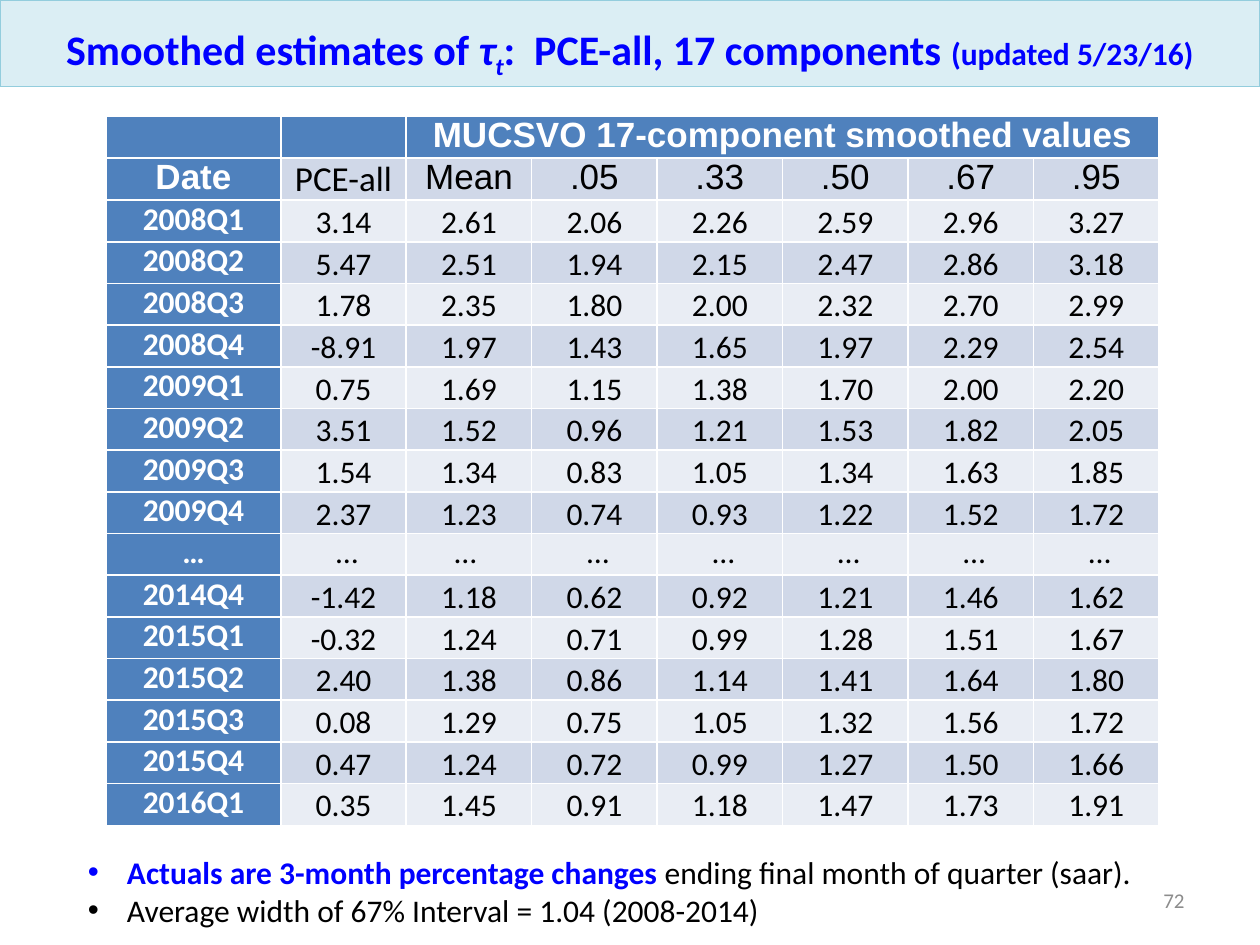
from lxml.etree import SubElement
from pptx import Presentation
from pptx.dml.color import RGBColor
from pptx.enum.text import MSO_ANCHOR as Anchor, PP_ALIGN as Align
from pptx.oxml.ns import qn
from pptx.util import Cm, Pt

BLUE = RGBColor(0x00, 0x00, 0xFF)
BLACK = RGBColor(0x00, 0x00, 0x00)
WHITE = RGBColor(0xFF, 0xFF, 0xFF)
GRAY = RGBColor(0x8C, 0x8C, 0x8C)
BANNER = RGBColor(0xDB, 0xEE, 0xF4)
BANNER_EDGE = RGBColor(0x93, 0xCD, 0xDD)
HEADER = RGBColor(0x4F, 0x81, 0xBD)
BANDS = RGBColor(0xD0, 0xD8, 0xE8), RGBColor(0xE9, 0xED, 0xF4)

TITLE = [
    ("Smoothed estimates of ", 24, False, False),
    ("τ", 24, True, False),
    ("t", 24, True, True),
    (":  PCE-all, 17 components ", 24, False, False),
    ("(updated 5/23/16)", 18, False, False),
]
GROUP_HEADING = "MUCSVO 17-component smoothed values"
COLUMNS = ["Date", "PCE-all", "Mean", ".05", ".33", ".50", ".67", ".95"]
ESTIMATES = [
    ("2008Q1", "3.14", "2.61", "2.06", "2.26", "2.59", "2.96", "3.27"),
    ("2008Q2", "5.47", "2.51", "1.94", "2.15", "2.47", "2.86", "3.18"),
    ("2008Q3", "1.78", "2.35", "1.80", "2.00", "2.32", "2.70", "2.99"),
    ("2008Q4", "-8.91", "1.97", "1.43", "1.65", "1.97", "2.29", "2.54"),
    ("2009Q1", "0.75", "1.69", "1.15", "1.38", "1.70", "2.00", "2.20"),
    ("2009Q2", "3.51", "1.52", "0.96", "1.21", "1.53", "1.82", "2.05"),
    ("2009Q3", "1.54", "1.34", "0.83", "1.05", "1.34", "1.63", "1.85"),
    ("2009Q4", "2.37", "1.23", "0.74", "0.93", "1.22", "1.52", "1.72"),
    ("…", " …", "… ", " …", " …", " …", " …", " …"),
    ("2014Q4", "-1.42", "1.18", "0.62", "0.92", "1.21", "1.46", "1.62"),
    ("2015Q1", "-0.32", "1.24", "0.71", "0.99", "1.28", "1.51", "1.67"),
    ("2015Q2", "2.40", "1.38", "0.86", "1.14", "1.41", "1.64", "1.80"),
    ("2015Q3", "0.08", "1.29", "0.75", "1.05", "1.32", "1.56", "1.72"),
    ("2015Q4", "0.47", "1.24", "0.72", "0.99", "1.27", "1.50", "1.66"),
    ("2016Q1", "0.35", "1.45", "0.91", "1.18", "1.47", "1.73", "1.91"),
]
NOTES = [
    [("Actuals are 3-month percentage changes ", BLUE, True),
     ("ending final month of quarter (saar).", BLACK, False)],
    [("Average width of 67% Interval = 1.04 (2008-2014)", BLACK, False)],
]
PAGE_NUMBER = "72"
DATE_WIDTH, VALUE_WIDTH, ROW_HEIGHT = 3.52, 2.53, 0.84


def style(font, size, color, bold=False, name="Calibri"):
    font.name, font.size, font.bold = name, Pt(size), bold
    font.color.rgb = color


def add_title(slide):
    title = slide.shapes.title
    title.left, title.top, title.width, title.height = Cm(0), Cm(0), Cm(25.4), Cm(1.75)
    title.fill.solid()
    title.fill.fore_color.rgb = BANNER
    title.line.color.rgb = BANNER_EDGE
    title.line.width = Pt(0)
    title.text_frame.vertical_anchor = Anchor.BOTTOM
    heading = title.text_frame.paragraphs[0]
    heading.alignment = Align.CENTER
    for text, size, italic, subscript in TITLE:
        run = heading.add_run()
        run.text = text
        style(run.font, size, BLUE, True)
        run.font.italic = italic
        if subscript:
            run._r.get_or_add_rPr().set("baseline", "-25000")


def fill_cell(cell, text, row, col):
    heading = row == 0 or col == 0
    number = row > 1 and col > 0 and "…" not in text
    cell.fill.solid()
    cell.fill.fore_color.rgb = HEADER if heading else BANDS[(row - 1) % 2]
    cell.margin_left = cell.margin_right = Cm(0.02 if number else 0.17)
    cell.margin_top = Cm(0.02 if number else 0)
    cell.margin_bottom = Cm(0)
    cell.vertical_anchor = Anchor.BOTTOM if number else Anchor.TOP
    cell.text = text
    paragraph = cell.text_frame.paragraphs[0]
    paragraph.alignment = Align.CENTER
    arial = row < 2 and text != "PCE-all"
    style(paragraph.font, 20 if row < 2 else 18, WHITE if heading else BLACK,
          heading, "Arial" if arial else "Calibri")


def add_estimates(slide):
    rows = [["", "", GROUP_HEADING] + [""] * 5, COLUMNS, *ESTIMATES]
    widths = [DATE_WIDTH] + [VALUE_WIDTH] * (len(COLUMNS) - 1)
    table = slide.shapes.add_table(
        len(rows), len(widths), Cm(2.14), Cm(2.34),
        Cm(sum(widths)), Cm(ROW_HEIGHT * len(rows))).table
    table.first_col, table.horz_banding = True, False
    for column, width in zip(table.columns, widths):
        column.width = Cm(width)
    for r, values in enumerate(rows):
        table.rows[r].height = Cm(ROW_HEIGHT)
        for c, text in enumerate(values):
            fill_cell(table.cell(r, c), text, r, c)
    table.cell(0, 2).merge(table.cell(0, len(widths) - 1))


def add_notes(slide):
    frame = slide.shapes.add_textbox(Cm(1.52), Cm(17.07), Cm(22.05), Cm(1.8)).text_frame
    frame.word_wrap = True
    for i, parts in enumerate(NOTES):
        note = frame.add_paragraph() if i else frame.paragraphs[0]
        properties = note._p.get_or_add_pPr()
        properties.set("marL", str(Cm(0.79)))
        properties.set("indent", str(-Cm(0.79)))
        SubElement(properties, qn("a:buFont"), typeface="Arial")
        SubElement(properties, qn("a:buChar"), char="•")
        for text, color, bold in parts:
            run = note.add_run()
            run.text = text
            style(run.font, 18, color, bold)


def add_page_number(slide):
    frame = slide.shapes.add_textbox(Cm(18.2), Cm(17.65), Cm(5.93), Cm(1.01)).text_frame
    frame.word_wrap = True
    frame.vertical_anchor = Anchor.MIDDLE
    frame.text = PAGE_NUMBER
    number = frame.paragraphs[0]
    number.alignment = Align.RIGHT
    style(number.font, 12, GRAY)


def main():
    deck = Presentation()
    deck.slide_width, deck.slide_height = Cm(25.4), Cm(19.05)
    slide = deck.slides.add_slide(deck.slide_layouts[5])
    add_page_number(slide)
    add_title(slide)
    add_notes(slide)
    add_estimates(slide)
    deck.save("out.pptx")


if __name__ == "__main__":
    main()
